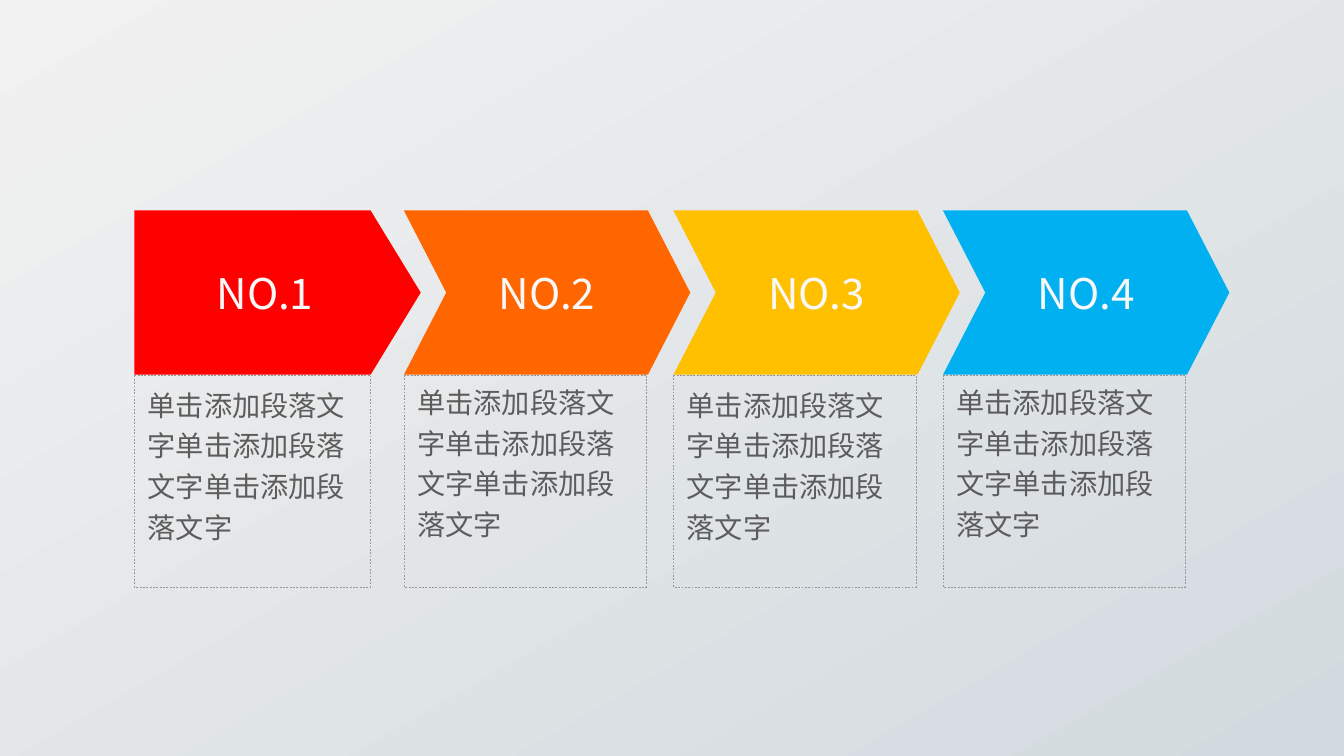
"""Build a four-step arrow process slide with a text box under each step."""
import pptx
import pptx.dml.color
import pptx.enum.dml
import pptx.enum.shapes
import pptx.enum.text
import pptx.util

Pt = pptx.util.Pt
SHAPE = pptx.enum.shapes.MSO_SHAPE
ANCHOR = pptx.enum.text.MSO_ANCHOR
ALIGN = pptx.enum.text.PP_ALIGN

FONT = "Noto Sans CJK SC"
BODY = "单击添加段落文字单击添加段落文字单击添加段落文字"
BACKGROUND = ["F2F2F2", "D3DADF"]
STEPS = [
    {"label": "NO.1", "color": "FF0000", "arrow": SHAPE.PENTAGON, "point": 0.305,
     "box_width": 126.4, "inset": 3.6},
    {"label": "NO.2", "color": "FF6600", "arrow": SHAPE.CHEVRON, "point": 0.258,
     "box_width": 129.8, "inset": 2},
    {"label": "NO.3", "color": "FFC000", "arrow": SHAPE.CHEVRON, "point": 0.258,
     "box_width": 129.8, "inset": 3.6},
    {"label": "NO.4", "color": "00B0F0", "arrow": SHAPE.CHEVRON, "point": 0.258,
     "box_width": 129.8, "inset": 2},
]
LEFT, TOP, PITCH = 72, 112.8, 144.4
ARROW_W, ARROW_H, BOX_H = 153.4, 88, 113.6


def rgb(value):
    return pptx.dml.color.RGBColor.from_string(value)


def add_shape(s, kind, x, y, w, h, adjustment):
    sp = s.shapes.add_shape(kind, Pt(x), Pt(y), Pt(w), Pt(h))
    sp.adjustments[0] = adjustment
    sp.shadow.inherit = False
    return sp


def add_text(sp, text, size, color, align, anchor, wrap):
    tf = sp.text_frame
    tf.word_wrap = wrap
    tf.vertical_anchor = anchor
    p = tf.paragraphs[0]
    p.alignment = align
    r = p.add_run()
    r.text = text
    r.font.size = Pt(size)
    r.font.name = FONT
    r.font.color.rgb = rgb(color)
    return p


def add_box(s, x, step):
    sp = add_shape(s, SHAPE.ROUNDED_RECTANGLE, x, TOP + ARROW_H,
                   step["box_width"], BOX_H, 0)
    sp.fill.background()
    sp.line.color.rgb = rgb("969696")
    sp.line.width = Pt(0.25)
    sp.line.dash_style = pptx.enum.dml.MSO_LINE.DASH
    p = add_text(sp, BODY, 15.1, "5C5C5C", ALIGN.LEFT, ANCHOR.TOP, True)
    p.line_spacing = 1.2
    sp.text_frame.margin_top = Pt(step["inset"])


def add_arrow(s, x, step):
    sp = add_shape(s, step["arrow"], x, TOP, ARROW_W, ARROW_H, step["point"])
    sp.fill.solid()
    sp.fill.fore_color.rgb = rgb(step["color"])
    sp.line.fill.background()
    add_text(sp, step["label"], 22.6, "F8F8F8", ALIGN.CENTER, ANCHOR.MIDDLE, False)


def main():
    prs = pptx.Presentation()
    prs.slide_width, prs.slide_height = Pt(720), Pt(405)
    s = prs.slides.add_slide(prs.slide_layouts[6])
    fill = s.background.fill
    fill.gradient()
    fill.gradient_angle = 300
    for position, (stop, color) in enumerate(zip(fill.gradient_stops, BACKGROUND)):
        stop.position = position
        stop.color.rgb = rgb(color)
    for add_part in (add_box, add_arrow):
        for i, step in enumerate(STEPS):
            add_part(s, LEFT + i * PITCH, step)
    prs.save("out.pptx")


if __name__ == "__main__":
    main()
